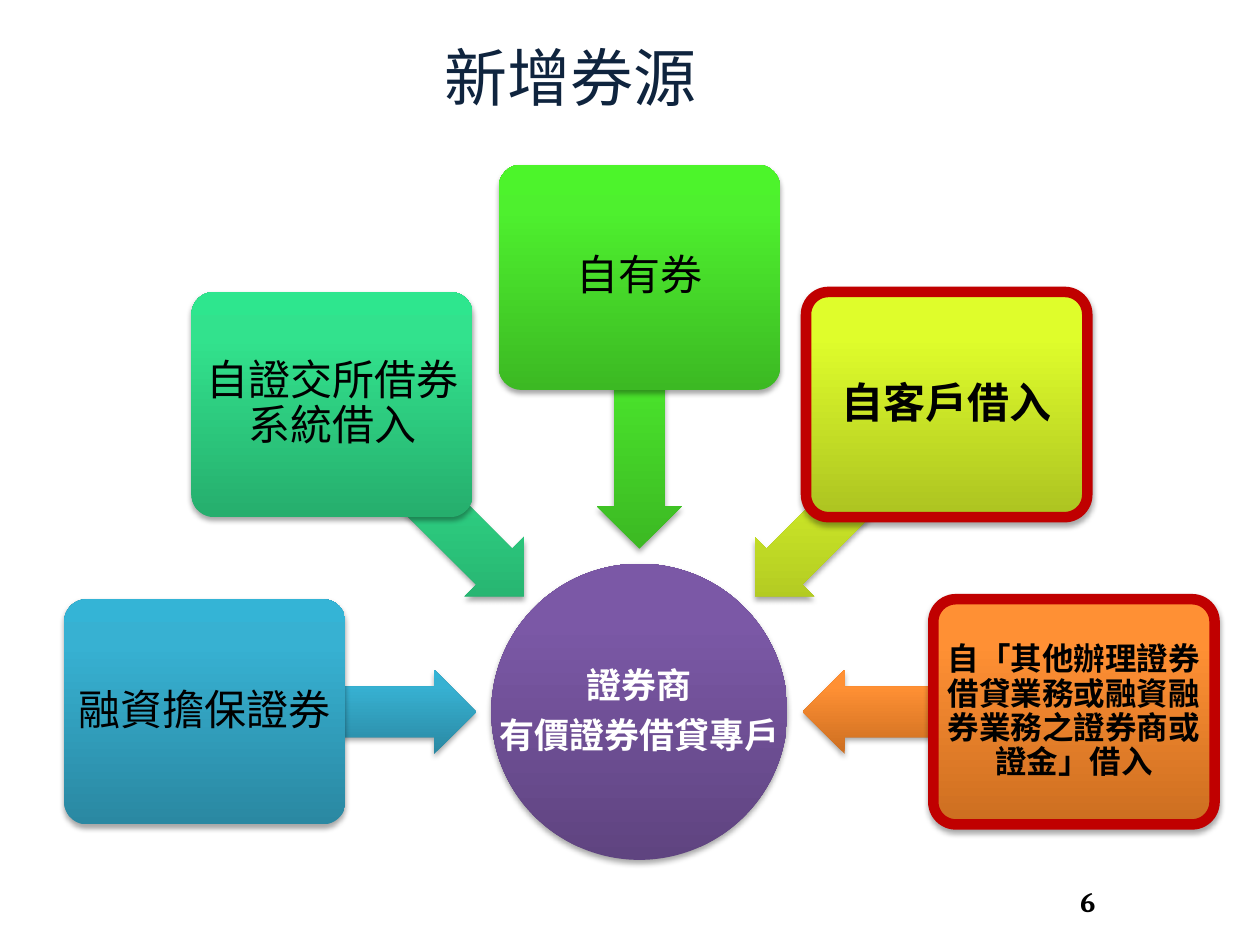
from math import cos, radians, sin

from lxml import etree
from pptx import Presentation
from pptx.dml.color import RGBColor
from pptx.enum.shapes import MSO_SHAPE
from pptx.enum.text import MSO_ANCHOR, PP_ALIGN
from pptx.oxml import parse_xml
from pptx.oxml.ns import nsdecls, qn
from pptx.util import Cm, Pt

NAVY = RGBColor(0x0F, 0x24, 0x3E)
BLACK = RGBColor(0x00, 0x00, 0x00)
WHITE = RGBColor(0xFF, 0xFF, 0xFF)
RED = RGBColor(0xC0, 0x00, 0x00)
# Gradients run from the bottom up: stops at 0, 80 and 100 percent
PURPLE = [RGBColor.from_string(c) for c in ("5F4480", "7B58A6", "7C57A8")]
BLUE = [RGBColor.from_string(c) for c in ("2A88A2", "37B1D2", "34B4D6")]
TEAL = [RGBColor.from_string(c) for c in ("26AE6D", "32E28D", "2EE68E")]
GREEN = [RGBColor.from_string(c) for c in ("3CB923", "4EF02E", "4CF52A")]
LIME = [RGBColor.from_string(c) for c in ("ACC321", "DFFD2B", "E1FF2B")]
ORANGE = [RGBColor.from_string(c) for c in ("CC6E20", "FF9034", "FF9136")]

HEADING_FONT = "Cambria"
BODY_FONT = "Noto Sans CJK SC"

prs = Presentation()
prs.slide_width, prs.slide_height = Cm(25.4), Cm(19.05)
slide = prs.slides.add_slide(prs.slide_layouts[5])


def add_gradient_shape(preset, center_x, center_y, width, height, colors):
    """Add a shape around its center, with a vertical gradient and soft shadow."""
    shape = slide.shapes.add_shape(
        preset, Cm(center_x - width / 2), Cm(center_y - height / 2),
        Cm(width), Cm(height))
    shape.line.fill.background()
    shape.fill.background()
    stops = "".join(
        f'<a:gs pos="{pos}"><a:srgbClr val="{color}"/></a:gs>'
        for pos, color in zip((0, 80000, 100000), colors))
    properties = shape._element.spPr
    properties.replace(properties.find(qn("a:noFill")), parse_xml(
        f'<a:gradFill rotWithShape="0" {nsdecls("a")}><a:gsLst>{stops}</a:gsLst>'
        '<a:lin ang="16200000" scaled="0"/></a:gradFill>'))
    properties.append(parse_xml(
        f'<a:effectLst {nsdecls("a")}><a:outerShdw blurRad="40000" dist="23000" '
        'dir="5400000" rotWithShape="0"><a:srgbClr val="000000">'
        '<a:alpha val="35000"/></a:srgbClr></a:outerShdw></a:effectLst>'))
    return shape


def set_label(shape, text, size, color, bold, inset):
    frame = shape.text_frame
    frame.text = text
    frame.word_wrap = True
    frame.vertical_anchor = MSO_ANCHOR.MIDDLE
    frame.margin_left = frame.margin_right = Cm(inset)
    frame.margin_top = frame.margin_bottom = Cm(inset)
    for paragraph in frame.paragraphs:
        paragraph.alignment = PP_ALIGN.CENTER
        paragraph.line_spacing = 0.9
        paragraph.space_after = Pt(round(size * 0.35))
        for run in paragraph.runs:
            run.font.size = Pt(size)
            run.font.bold = bold
            run.font.color.rgb = color
            run.font.name = BODY_FONT
            east_asian = etree.SubElement(run.font._element, qn("a:ea"))
            east_asian.set("typeface", BODY_FONT)


# Title
title = slide.shapes.title
title.left, title.top = Cm(3.5), Cm(0.53)
title.width, title.height = Cm(16), Cm(2)
title.text_frame.text = "新增券源"
title.text_frame.vertical_anchor = MSO_ANCHOR.MIDDLE
title_paragraph = title.text_frame.paragraphs[0]
title_paragraph.alignment = PP_ALIGN.CENTER
title_font = title_paragraph.runs[0].font
title_font.size = Pt(36)
title_font.name = HEADING_FONT
title_font.color.rgb = NAVY

# Page number
page_number = slide.shapes.add_textbox(Cm(18.97), Cm(17.65), Cm(5.92), Cm(1.02))
page_number.text_frame.text = "6"
page_number.text_frame.word_wrap = True
page_number.text_frame.vertical_anchor = MSO_ANCHOR.MIDDLE
page_paragraph = page_number.text_frame.paragraphs[0]
page_paragraph.alignment = PP_ALIGN.CENTER
page_font = page_paragraph.runs[0].font
page_font.size = Pt(16)
page_font.bold = True
page_font.name = HEADING_FONT
page_font.color.rgb = BLACK

# Central account
HUB_X, HUB_Y = 12.89, 14.35
account = add_gradient_shape(MSO_SHAPE.OVAL, HUB_X, HUB_Y, 5.97, 5.97, PURPLE)
set_label(account, "證券商\n有價證券借貸專戶", 20, WHITE, True, 0.03)
account.text_frame.word_wrap = False

# Sources on a half circle around the account, 45 degrees apart
ARROW_RADIUS, SOURCE_RADIUS = 6.02, 8.76
sources = [
    # label, size, colors, newly added
    ("融資擔保證券", 24, BLUE, False),
    ("自證交所借券系統借入", 24, TEAL, False),
    ("自有券", 24, GREEN, False),
    ("自客戶借入", 24, LIME, True),
    ("自「其他辦理證券借貸業務或融資融券業務之證券商或證金」借入", 18, ORANGE, True),
]
for index, (label, size, colors, is_new) in enumerate(sources):
    angle = 45 * index
    dx, dy = -cos(radians(angle)), -sin(radians(angle))

    arrow = add_gradient_shape(
        MSO_SHAPE.LEFT_ARROW, HUB_X + ARROW_RADIUS * dx,
        HUB_Y + ARROW_RADIUS * dy, 5.46, 1.7, colors)
    arrow.adjustments[0] = 0.6
    arrow.adjustments[1] = 0.5
    arrow.rotation = (180 + angle) % 360

    source = add_gradient_shape(
        MSO_SHAPE.ROUNDED_RECTANGLE, HUB_X + SOURCE_RADIUS * dx,
        HUB_Y + SOURCE_RADIUS * dy, 5.67, 4.54, colors)
    source.adjustments[0] = 0.1
    if is_new:
        source.line.color.rgb = RED
        source.line.width = Pt(6)
    set_label(source, label, size, BLACK, is_new, 0.1)

prs.save("out.pptx")
